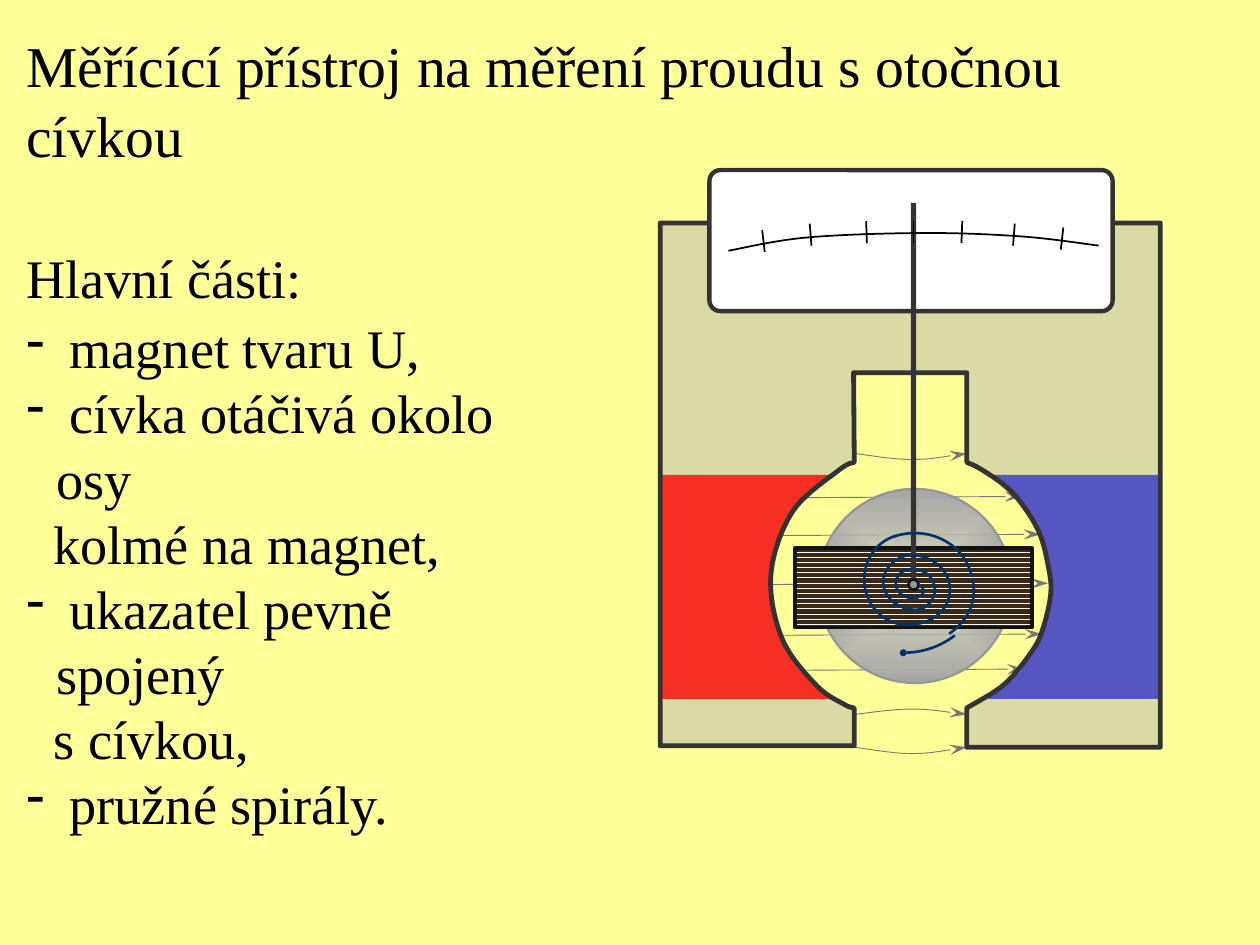
from math import cos, radians, sin, tan

from lxml import etree
from pptx import Presentation
from pptx.dml.color import RGBColor
from pptx.enum import dml, shapes, text
from pptx.oxml import parse_xml
from pptx.oxml.ns import qn
from pptx.util import Pt

CREAM = RGBColor(0xFF, 0xFF, 0x99)
BLACK = RGBColor(0, 0, 0)
WHITE = RGBColor(0xFF, 0xFF, 0xFF)
STEEL = RGBColor(0xB2, 0xB2, 0xB2)
RED = RGBColor(0xFF, 0, 0)
BLUE = RGBColor(0x33, 0x33, 0xCC)
DARK = RGBColor(0x33, 0x33, 0x33)
INK = RGBColor(0x11, 0x11, 0x11)
GRAY = RGBColor(0x77, 0x77, 0x77)
SILVER = RGBColor(0x96, 0x96, 0x96)
BROWN = RGBColor(0x3C, 0x28, 0x14)
NAVY = RGBColor(0, 0x33, 0x66)
FONT = "Times New Roman"
NS = "http://schemas.openxmlformats.org/drawingml/2006/main"
KIND = shapes.MSO_SHAPE
LEFT = [(111.2, 167.2), (102.5, 171.6), (76, 195.3), (63.6, 231.3),
        (70, 268), (89.6, 294.7), (105.4, 305.5), (111.2, 307.6)]
RIGHT = [(175.5, 307.6), (197, 294), (212.7, 275.2), (219, 262.3), (223.5, 242),
         (222, 226.3), (217, 207.6), (207, 191), (196.8, 180.2), (183, 170.8),
         (175.5, 167.2)]
NORTH = [(0.3, 174.4), (0.3, 302.4), (98.2, 302.4), (88.8, 294), (79.5, 286),
         (72.3, 273.8), (66.5, 258.7), (63.6, 243.6), (63.6, 228.4), (70.3, 209),
         (73.7, 198.2), (83.8, 184.5), (97.5, 174.4)]
SOUTH = [(285.5, 174.4), (285.5, 302.4), (187.5, 302.4), (196.8, 294), (206.2, 286.8),
         (213.4, 274.5), (219.2, 258.7), (224.2, 243.6), (222.8, 229.2), (220.6, 216.9),
         (217, 206.1), (212.7, 196.8), (201.9, 184.5), (188.2, 174.4)]


def lines(points):
    """Return one straight segment to each point."""
    return [[p] for p in points]


def smooth(knots):
    """Return cubic segments of a smooth curve through the knots."""
    ends = [knots[0], *knots, knots[-1]]
    return [[(b[0] + (c[0] - a[0]) / 6, b[1] + (c[1] - a[1]) / 6),
             (c[0] - (d[0] - b[0]) / 6, c[1] - (d[1] - b[1]) / 6), c]
            for a, b, c, d in zip(ends, ends[1:], ends[2:], ends[3:])]


def arc(x, y, w, h, first, last):
    """Return the start and the cubic segments of an elliptic arc."""
    count = -(-(last - first) // 90)
    step = radians((last - first) / count)
    pull = 4 / 3 * tan(step / 4)

    def spot(a, k):
        """Return a point pushed along the tangent at an angle."""
        return x + w * (cos(a) - k * sin(a)), y + h * (sin(a) + k * cos(a))

    turns = [radians(first) + i * step for i in range(count + 1)]
    return spot(turns[0], 0), [[spot(a, pull), spot(b, -pull), spot(b, 0)]
                               for a, b in zip(turns, turns[1:])]


def paint(shape, fill=None, line=None, width=1, alpha=None):
    """Set the fill and the line of a shape."""
    shape.shadow.inherit = False
    if fill is None:
        shape.fill.background()
    else:
        shape.fill.solid()
        shape.fill.fore_color.rgb = fill
        if alpha:
            color = shape.fill._xPr.find(".//" + qn("a:srgbClr"))
            etree.SubElement(color, qn("a:alpha"), val=str(alpha * 1000))
    if line is None:
        shape.line.fill.background()
    else:
        shape.line.color.rgb = line
        shape.line.width = Pt(width)


def tip(shape, kind, w, size):
    """End a line with a head of the given kind."""
    etree.SubElement(shape.line._get_or_add_ln(), qn("a:tailEnd"), type=kind, w=w, len=size)


def trace(slide, box, start, parts, closed=False, **look):
    """Draw straight and cubic segments relative to the box."""
    spots = [(Pt(box[0] + x), Pt(box[1] + y)) for x, y in [start, *sum(parts, [])]]
    pen = slide.shapes.build_freeform(*spots[0])
    pen.add_line_segments(spots[1:], close=closed)
    shape = pen.convert_to_shape()
    steps = iter(list(shape._element.iter(qn("a:lnTo"))))
    for part in parts:
        group = [next(steps) for _ in part]
        if len(group) == 3:
            cubic = etree.Element(qn("a:cubicBezTo"))
            group[0].addprevious(cubic)
            for step in group:
                cubic.append(step[0])
                step.getparent().remove(step)
    paint(shape, **look)
    return shape


def place(slide, box, kind, x, y, w, h, **look):
    """Add a preset shape relative to the box."""
    shape = slide.shapes.add_shape(kind, Pt(box[0] + x), Pt(box[1] + y), Pt(w), Pt(h))
    paint(shape, **look)
    return shape


def field(slide, box):
    """Draw the field lines between the poles."""
    flows = [((x1, y), lines([(x2, y - 0.7)])) for y, x1, x2 in (
        (237, 63, 222), (266, 68.7, 218.4), (209, 68, 217.7), (286, 78, 208.4), (187.4, 76, 207))]
    for y, sag in ((311.2, -3), (330, 3.6), (162.2, 3.4)):
        knots = [(111.5, y), (143.5, y + sag), (175.5, y)]
        flows.append((knots[0], smooth(knots)))
    for start, parts in flows:
        tip(trace(slide, box, start, parts, line=GRAY, width=0.5), "stealth", "med", "lg")


def magnet(slide, box):
    """Draw the U magnet with its two poles."""
    base = (111.2, 329.2)
    frame = [*lines([(0.3, 329.2), (0.3, 30.4), (286.1, 30.4), (286.1, 330), (175.5, 330),
                     RIGHT[0]]), *smooth(RIGHT),
             *lines([(175.5, 116), (110.8, 116), LEFT[0]]), *smooth(LEFT)]
    trace(slide, box, base, frame, True, fill=STEEL, alpha=47)
    for pole, color in ((NORTH, RED), (SOUTH, BLUE)):
        trace(slide, box, pole[0], lines(pole[1:]), True, fill=color, alpha=79)
    trace(slide, box, base, frame, True, line=DARK, width=2.75)


def coil(slide, box):
    """Draw the core and the coil."""
    core = place(slide, box, KIND.OVAL, 90.3, 182.4, 110.9, 110.9, line=SILVER, width=1.25)
    blend = parse_xml(
        f'<a:gradFill xmlns:a="{NS}"><a:gsLst><a:gs pos="0"><a:srgbClr val="C8C8C8">'
        '<a:alpha val="70000"/></a:srgbClr></a:gs><a:gs pos="100000">'
        '<a:srgbClr val="A6A6A6"/></a:gs></a:gsLst><a:path path="shape">'
        '<a:fillToRect l="50000" t="50000" r="50000" b="50000"/></a:path></a:gradFill>')
    props = core._element.spPr
    props.replace(props.find(qn("a:noFill")), blend)
    wire = place(slide, box, KIND.RECTANGLE, 77.3, 216.2, 135.4, 45.4, line=INK, width=2)
    wire.fill.patterned()
    wire.fill.pattern = dml.MSO_PATTERN.DARK_HORIZONTAL
    wire.fill.fore_color.rgb = BROWN
    wire.fill.back_color.rgb = WHITE


def spring(slide, box):
    """Draw the pointer, its hub and the spiral spring."""
    hand = place(slide, box, KIND.UP_ARROW, 142.1, 18.9, 5.8, 215.3, fill=DARK)
    hand.adjustments[0], hand.adjustments[1] = 0.5, 0
    place(slide, box, KIND.OVAL, 142.1, 234.2, 5.8, 5.8, fill=SILVER, line=INK, width=1.5)
    for turn in ((146.4, 235.6, 18.7, 15.8, 90, 259), (141.4, 234.2, 24.5, 25.9, 90, 255),
                 (145.7, 237.8, 33.1, 30.2, 248, 350), (138.5, 240.7, 41, 32.4, 348, 409),
                 (144.3, 240.7, 6.5, 4.3, 303, 455), (144.3, 236.4, 9.4, 8.3, 90, 270),
                 (145.7, 240, 11.5, 11.5, 270, 447), (143.6, 240, 22.3, 19.8, 270, 457),
                 (139.2, 227, 49, 49, 53, 90)):
        curl = trace(slide, box, *arc(*turn), line=NAVY, width=1.5)
    tip(curl, "oval", "sm", "sm")


def scale(slide, box):
    """Draw the arc of the scale and its ticks."""
    knots = [(39.2, 46.3), (83.7, 38.8), (150.8, 36.2), (207.3, 38.2), (250.8, 43.4)]
    trace(slide, box, knots[0], smooth(knots), line=BLACK, width=1)
    left, top = box
    for x, y in ((60, 47), (86.7, 43.4), (118.4, 42), (145, 42), (172.4, 42),
                 (201.9, 43.4), (229.2, 45.6)):
        tick = slide.shapes.add_connector(
            shapes.MSO_CONNECTOR.STRAIGHT, Pt(left + x), Pt(top + y),
            Pt(left + x + (x - 145) * 0.017), Pt(top + y - 12.6))
        tick.line.color.rgb = BLACK
        tick.line.width = Pt(1)
        etree.SubElement(tick._element.spPr, qn("a:effectLst"))


def meter(slide, box):
    """Draw the whole moving-coil meter."""
    field(slide, box)
    magnet(slide, box)
    plate = place(slide, box, KIND.ROUNDED_RECTANGLE, 28.4, 0.2, 230.4, 80.6,
                  fill=WHITE, line=DARK, width=2.5)
    plate.adjustments[0] = 0.078
    coil(slide, box)
    spring(slide, box)
    scale(slide, box)


def words(slide, box, rows, size):
    """Write rows of text, each with its bullet flag and indent."""
    frame = slide.shapes.add_textbox(*map(Pt, box)).text_frame
    frame.word_wrap = True
    frame.vertical_anchor = text.MSO_ANCHOR.TOP
    for i, (row, dash, indent) in enumerate(rows):
        para = frame.add_paragraph() if i else frame.paragraphs[0]
        para.text = row
        para.font.name, para.font.size = FONT, Pt(size)
        para.font.color.rgb = BLACK
        props = para._p.get_or_add_pPr()
        props.set("marL", str(Pt(indent)))
        props.set("indent", str(-Pt(indent) if dash else 0))
        if dash:
            mark = etree.Element(qn("a:buChar"), char="-")
            props.find(qn("a:defRPr")).addprevious(mark)
    return frame


def main():
    """Build and save the slide."""
    deck = Presentation()
    deck.slide_width, deck.slide_height = Pt(720), Pt(540)
    slide = deck.slides.add_slide(deck.slide_layouts[6])
    slide.background.fill.solid()
    slide.background.fill.fore_color.rgb = CREAM
    title = "Měřícící přístroj na měření proudu s otočnou cívkou"
    words(slide, (8, 13.7, 704, 47), [(title, False, 0)], 33)
    meter(slide, (377, 97))
    parts = [("Hlavní části:", False, 0), (" magnet tvaru U,", True, 17),
             (" cívka otáčivá okolo osy", True, 17), ("kolmé na magnet,", False, 15.5),
             (" ukazatel pevně spojený", True, 17), ("s cívkou,", False, 15.5),
             (" pružné spirály.", True, 17)]
    body = words(slide, (8, 136, 326, 271), parts, 31)
    body.paragraphs[0].space_after = Pt(3)
    deck.save("out.pptx")


if __name__ == "__main__":
    main()
